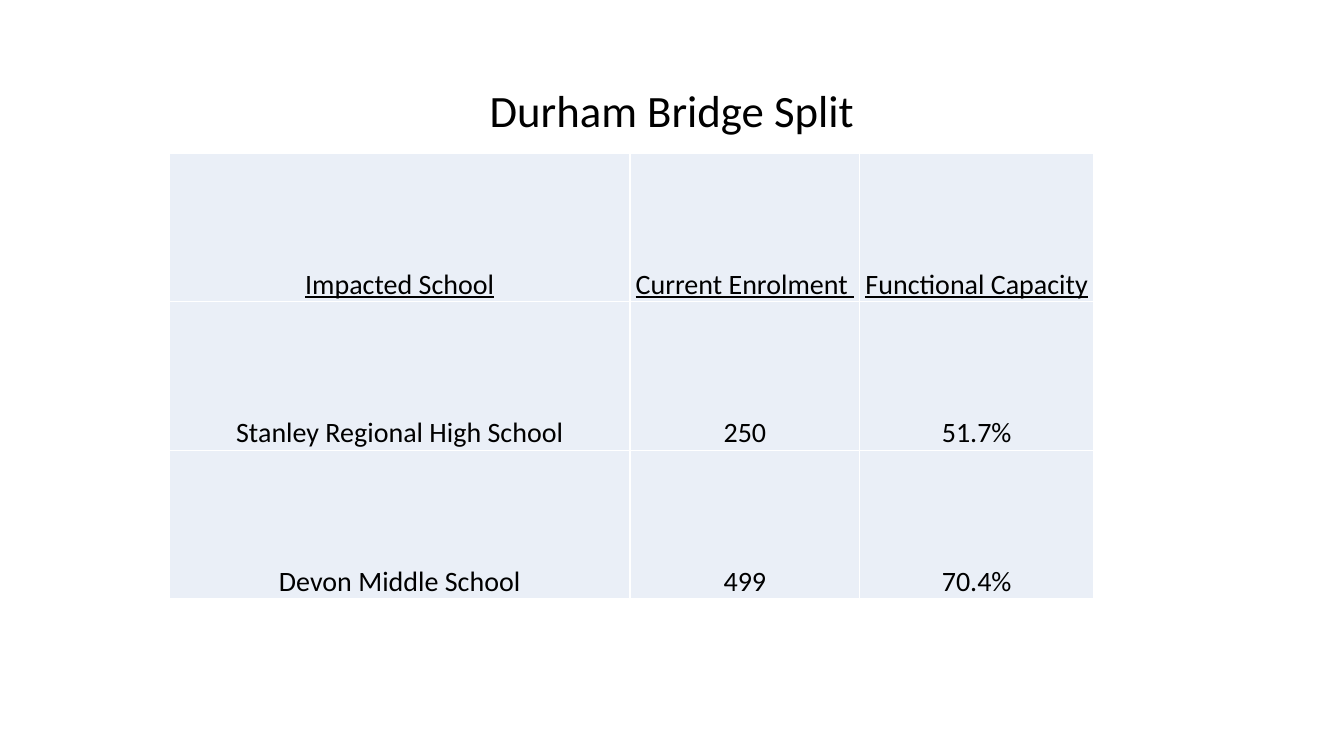
from lxml import etree
from pptx import Presentation
from pptx.dml.color import RGBColor
from pptx.enum import text
from pptx.oxml import ns
from pptx.util import Pt

BLACK = RGBColor(0x00, 0x00, 0x00)
WHITE = RGBColor(0xFF, 0xFF, 0xFF)
PALE_BLUE = RGBColor(0xEA, 0xEF, 0xF7)

SCHOOLS = [
    ("Impacted School", "Current Enrolment ", "Functional Capacity"),
    ("Stanley Regional High School", "250", "51.7%"),
    ("Devon Middle School", "499", "70.4%"),
]
COLUMN_WIDTHS = [329, 164.2, 167]
ROW_HEIGHT = 106.1
CELL_FORMAT = {
    "margin_left": Pt(0.75),
    "margin_right": Pt(0.75),
    "margin_top": Pt(0.75),
    "margin_bottom": 0,
    "vertical_anchor": text.MSO_ANCHOR.BOTTOM,
}


def write(frame, words, size, underline=False):
    frame.text = words
    paragraph = frame.paragraphs[0]
    paragraph.alignment = text.PP_ALIGN.CENTER
    font = paragraph.runs[0].font
    font.name = "Calibri"
    font.size = Pt(size)
    font.color.rgb = BLACK
    font.underline = underline
    return paragraph


def add_borders(cell):
    properties = cell._tc.get_or_add_tcPr()
    for side in ("lnL", "lnR", "lnT", "lnB"):
        line = etree.SubElement(properties, ns.qn(f"a:{side}"), w=str(Pt(1)))
        fill = etree.SubElement(line, ns.qn("a:solidFill"))
        etree.SubElement(fill, ns.qn("a:srgbClr"), val=str(WHITE))


deck = Presentation()
deck.slide_width, deck.slide_height = Pt(960), Pt(540)
slide = deck.slides.add_slide(deck.slide_layouts[5])

heading = slide.shapes.title
heading.left, heading.top = Pt(66), Pt(28.75)
heading.width, heading.height = Pt(828), Pt(104.4)
heading.text_frame.vertical_anchor = text.MSO_ANCHOR.MIDDLE
write(heading.text_frame, "Durham Bridge Split", 32).line_spacing = 0.9

enrolment = slide.shapes.add_table(
    len(SCHOOLS), len(COLUMN_WIDTHS), Pt(121), Pt(109.5),
    Pt(sum(COLUMN_WIDTHS)), Pt(ROW_HEIGHT * len(SCHOOLS)),
).table
for column, width in zip(enrolment.columns, COLUMN_WIDTHS):
    column.width = Pt(width)

for row_index, school in enumerate(SCHOOLS):
    enrolment.rows[row_index].height = Pt(ROW_HEIGHT)
    for column_index, words in enumerate(school):
        cell = enrolment.cell(row_index, column_index)
        for attribute, value in CELL_FORMAT.items():
            setattr(cell, attribute, value)
        add_borders(cell)
        cell.fill.solid()
        cell.fill.fore_color.rgb = PALE_BLUE
        write(cell.text_frame, words, 20, row_index == 0).runs[0].font.bold = False

deck.save("out.pptx")
